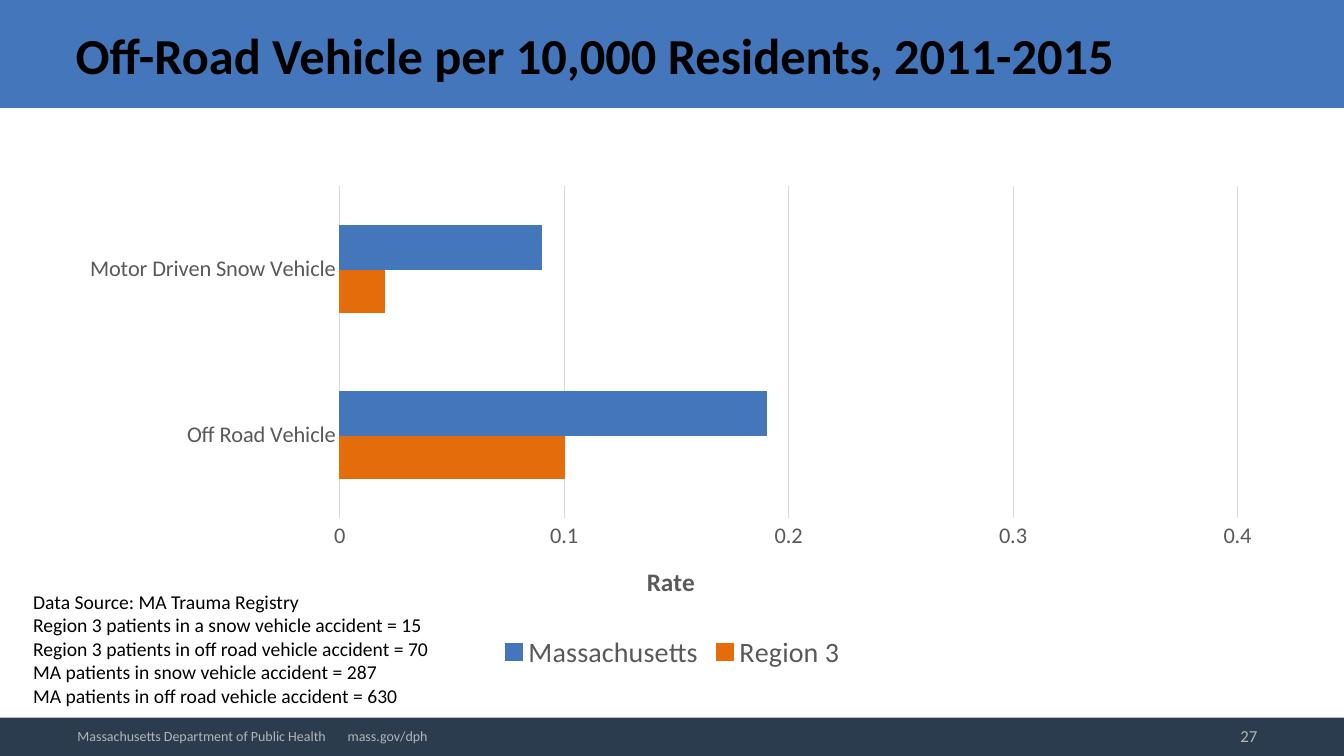
from lxml import etree
from pptx import Presentation
from pptx.chart.data import CategoryChartData
from pptx.dml.color import RGBColor
from pptx.enum.chart import XL_CHART_TYPE as CHART, XL_LEGEND_POSITION as LEGEND, XL_TICK_MARK as TICK
from pptx.enum.shapes import MSO_SHAPE as SHAPE
from pptx.enum.text import MSO_ANCHOR as ANCHOR, PP_ALIGN as ALIGN
from pptx.oxml import parse_xml
from pptx.oxml.ns import nsdecls, qn
from pptx.util import Inches, Pt

C = {"blue": "4376BB", "navy": "2A3C4E", "orange": "E46C0A", "black": "000000",
     "label": "595959", "grid": "D9D9D9", "footer": "B5B5B5"}


def rgb(name):
    return RGBColor.from_string(C[name])


def style(font, size, color, bold=False):
    font.name = "Calibri"
    font.size = Pt(size)
    font.bold = bold
    font.color.rgb = rgb(color)


prs = Presentation()
prs.slide_width = Inches(13.33)
prs.slide_height = Inches(7.5)
s = prs.slides.add_slide(prs.slide_layouts[5])

title = s.shapes.title
title.left, title.top, title.width, title.height = map(Inches, (0.65, 0.06, 12, 0.96))
title.text_frame.text = "Off-Road Vehicle per 10,000 Residents, 2011-2015"
title.text_frame.vertical_anchor = ANCHOR.MIDDLE
p = title.text_frame.paragraphs[0]
p.alignment = ALIGN.LEFT
style(p.runs[0].font, 36, "black", True)

for top, height, color in [(0, 1.07, "blue"), (7.12, 0.38, "navy")]:
    band = s.shapes.add_shape(SHAPE.RECTANGLE, 0, Inches(top), prs.slide_width, Inches(height))
    band.shadow.inherit = False
    band.fill.solid()
    band.fill.fore_color.rgb = rgb(color)
    band.line.fill.background()
    title.element.addprevious(band.element)

data = CategoryChartData()
data.categories = ["Off Road Vehicle", "Motor Driven Snow Vehicle"]
data.add_series("Region 3", (0.1, 0.02))
data.add_series("Massachusetts", (0.19, 0.09))
chart = s.shapes.add_chart(CHART.BAR_CLUSTERED, Inches(0.67), Inches(1.75),
                           Inches(12), Inches(4.95), data).chart
style(chart.font, 10, "black")
chart.has_title = False
chart.has_legend = True
chart.legend.position = LEGEND.BOTTOM
chart.legend.include_in_layout = False
style(chart.legend.font, 20, "label")

plot = chart.plots[0]
plot.gap_width = 182
plot.overlap = 0
plot.vary_by_categories = False
for series, color in zip(plot.series, ("orange", "blue")):
    series.format.fill.solid()
    series.format.fill.fore_color.rgb = rgb(color)
    series.format.line.color.rgb = rgb(color)
    series.format.line.width = Pt(0.75)

cat_axis, val_axis = chart.category_axis, chart.value_axis
for axis in (cat_axis, val_axis):
    axis.major_tick_mark = axis.minor_tick_mark = TICK.NONE
    style(axis.tick_labels.font, 16, "label")
val_axis.minimum_scale = 0
val_axis.maximum_scale = 0.4
val_axis.major_unit = 0.1
val_axis.tick_labels.number_format = "General"
val_axis.tick_labels.number_format_is_linked = False
val_axis.format.line.fill.background()
for line in (cat_axis.format.line, val_axis.major_gridlines.format.line):
    line.color.rgb = rgb("grid")
    line.width = Pt(0.75)
val_axis.axis_title.text_frame.text = "Rate"
style(val_axis.axis_title.text_frame.paragraphs[0].runs[0].font, 18, "label", True)

plot_area = chart.element.find(".//" + qn("c:plotArea"))
for old in plot_area.findall(qn("c:layout")):
    plot_area.remove(old)
layout = parse_xml(f'<c:layout {nsdecls("c")}><c:manualLayout/></c:layout>')
for tag, val in [("layoutTarget", "inner"), ("xMode", "edge"), ("yMode", "edge"),
                 ("x", "0.225"), ("y", "0.02"), ("w", "0.742"), ("h", "0.665")]:
    etree.SubElement(layout[0], qn("c:" + tag)).set("val", val)
plot_area.insert(0, layout)

notes = """Data Source: MA Trauma Registry
Region 3 patients in a snow vehicle accident = 15
Region 3 patients in off road vehicle accident = 70
MA patients in snow vehicle accident = 287
MA patients in off road vehicle accident = 630"""
texts = [
    (0.23, 5.8, 4.99, 1.51, notes, 14, "black", ANCHOR.TOP, ALIGN.LEFT),
    (9.58, 7.1, 2.99, 0.4, "27", 12, "footer", ANCHOR.MIDDLE, ALIGN.RIGHT),
    (0.67, 7.12, 4.17, 0.37, "Massachusetts Department of Public Health\tmass.gov/dph",
     10, "footer", ANCHOR.MIDDLE, ALIGN.LEFT),
]
for left, top, width, height, text, size, color, anchor, align in texts:
    tf = s.shapes.add_textbox(*map(Inches, (left, top, width, height))).text_frame
    tf.word_wrap = True
    tf.vertical_anchor = anchor
    tf.text = text
    for p in tf.paragraphs:
        p.alignment = align
        if "\t" in text:
            tabs = etree.SubElement(p._p.get_or_add_pPr(), qn("a:tabLst"))
            etree.SubElement(tabs, qn("a:tab"), pos=str(Inches(2.68)), algn="l")
        for r in p.runs:
            style(r.font, size, color)

prs.save("out.pptx")
